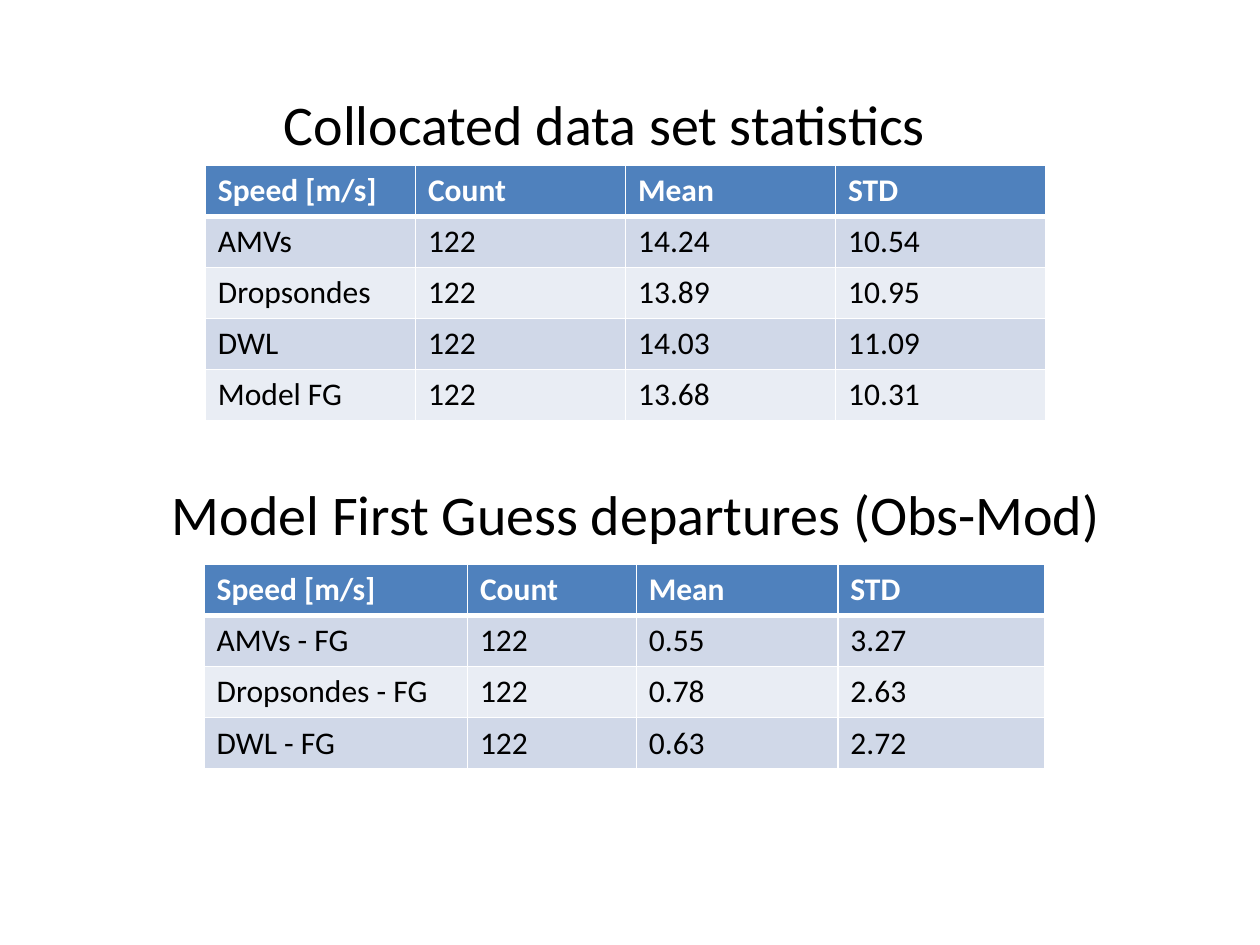
from lxml import etree
from pptx import Presentation
from pptx.dml.color import RGBColor
from pptx.enum.text import MSO_ANCHOR, PP_ALIGN
from pptx.oxml.ns import qn
from pptx.util import Inches, Pt

CENTER = PP_ALIGN.CENTER
MIDDLE = MSO_ANCHOR.MIDDLE

WHITE = RGBColor(0xFF, 0xFF, 0xFF)
BLACK = RGBColor(0x00, 0x00, 0x00)
HEADER_BLUE = RGBColor(0x4F, 0x81, 0xBD)
BANDS = (RGBColor(0xD0, 0xD8, 0xE8), RGBColor(0xE9, 0xED, 0xF4))

FONT = "Calibri"
HEADING_SIZE = (9, 1.25)
TABLE_WIDTH = 6.67
HEADER = ("Speed [m/s]", "Count", "Mean", "STD")

STATISTICS = {
    "heading": "Collocated data set statistics",
    "heading_at": (0.3, 0.35),
    "table_at": (1.63, 1.31),
    "height": 2.03,
    "columns": (TABLE_WIDTH / 4,) * 4,
    "rows": (
        HEADER,
        ("AMVs", "122", "14.24", "10.54"),
        ("Dropsondes", "122", "13.89", "10.95"),
        ("DWL", "122", "14.03", "11.09"),
        ("Model FG", "122", "13.68", "10.31"),
    ),
}
DEPARTURES = {
    "heading": "Model First Guess departures (Obs-Mod)",
    "heading_at": (0.55, 3.45),
    "table_at": (1.62, 4.48),
    "height": 1.62,
    "columns": (2.09, 1.34, 1.6, 1.64),
    "rows": (
        HEADER,
        ("AMVs - FG", "122", "0.55", "3.27"),
        ("Dropsondes - FG", "122", "0.78", "2.63"),
        ("DWL - FG", "122", "0.63", "2.72"),
    ),
}


def style_text(paragraph, size, color, bold=False):
    font = paragraph.font
    font.name = FONT
    font.size = Pt(size)
    font.bold = bold
    font.color.rgb = color


def write_heading(heading, text):
    frame = heading.text_frame
    frame.word_wrap = True
    frame.vertical_anchor = MIDDLE
    frame.text = text
    frame.paragraphs[0].alignment = CENTER
    style_text(frame.paragraphs[0], 32, BLACK)


def add_borders(cell, row):
    widths = {"lnL": 1, "lnR": 1, "lnT": 3 if row == 1 else 1, "lnB": 3 if row == 0 else 1}
    properties = cell._tc.get_or_add_tcPr()
    for side, width in widths.items():
        line = etree.SubElement(properties, qn(f"a:{side}"), w=str(Pt(width)))
        fill = etree.SubElement(line, qn("a:solidFill"))
        etree.SubElement(fill, qn("a:srgbClr"), val=str(WHITE))


def add_data_table(slide, section):
    rows, columns = section["rows"], section["columns"]
    left, top = section["table_at"]
    table = slide.shapes.add_table(
        len(rows), len(columns), Inches(left), Inches(top),
        Inches(TABLE_WIDTH), Inches(section["height"]),
    ).table
    for column, width in zip(table.columns, columns):
        column.width = Inches(width)
    for r, values in enumerate(rows):
        is_header = r == 0
        for c, value in enumerate(values):
            cell = table.cell(r, c)
            add_borders(cell, r)
            cell.fill.solid()
            cell.fill.fore_color.rgb = HEADER_BLUE if is_header else BANDS[(r - 1) % 2]
            cell.text = value
            style_text(cell.text_frame.paragraphs[0], 18, WHITE if is_header else BLACK, is_header)


def main():
    presentation = Presentation()
    presentation.slide_width = Inches(10)
    presentation.slide_height = Inches(7.5)
    slide = presentation.slides.add_slide(presentation.slide_layouts[5])

    width, height = map(Inches, HEADING_SIZE)
    title = slide.shapes.title
    title.left, title.top = map(Inches, STATISTICS["heading_at"])
    title.width, title.height = width, height
    write_heading(title, STATISTICS["heading"])

    for section in (STATISTICS, DEPARTURES):
        add_data_table(slide, section)

    left, top = map(Inches, DEPARTURES["heading_at"])
    departures_heading = slide.shapes.add_textbox(left, top, width, height)
    write_heading(departures_heading, DEPARTURES["heading"])

    presentation.save("out.pptx")


if __name__ == "__main__":
    main()
